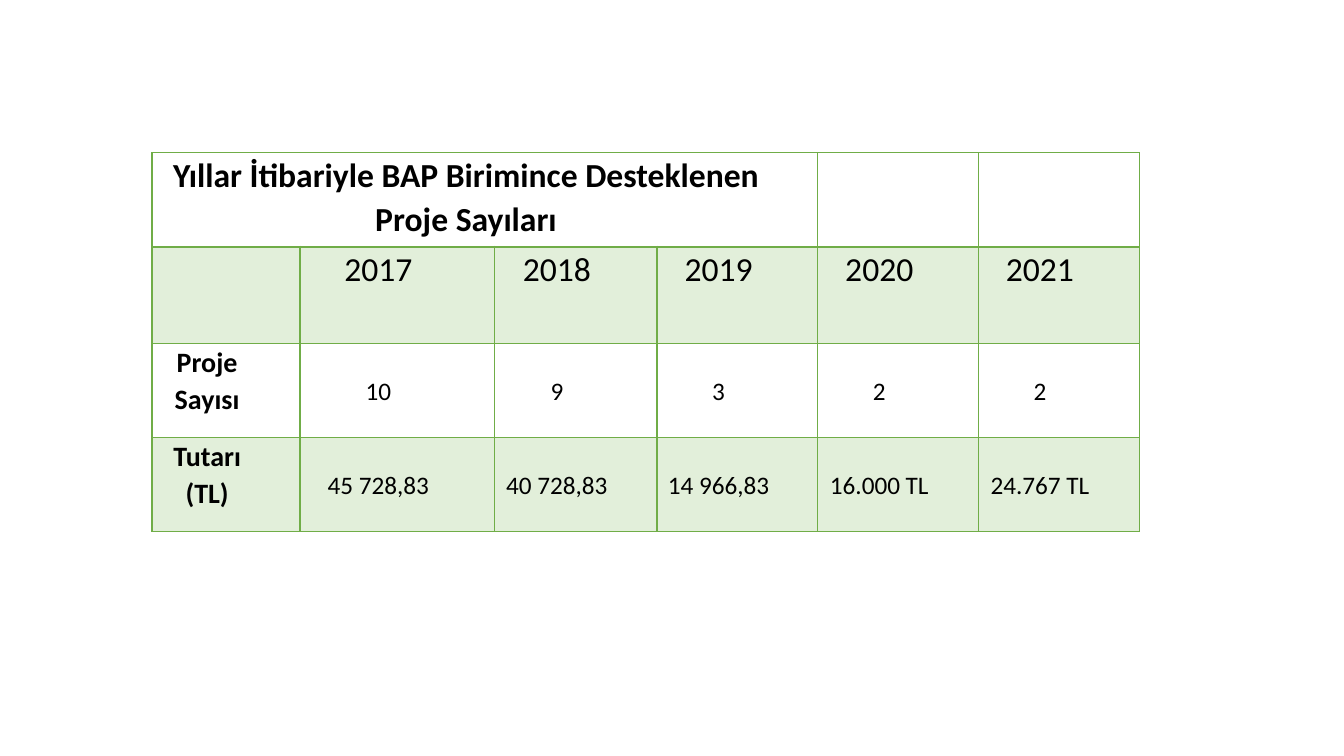
from lxml.etree import SubElement
from pptx import Presentation
from pptx.dml.color import RGBColor
from pptx.enum.text import MSO_ANCHOR as Anchor, PP_ALIGN as Align
from pptx.oxml.ns import qn
from pptx.util import Cm, Pt

GREEN, PALE_GREEN, WHITE, BLACK = "70AD47", "E2EFDA", "FFFFFF", "000000"


def color(value):
    return RGBColor.from_string(value)


def add_borders(cell, bottom_width):
    properties = cell._tc.get_or_add_tcPr()
    widths = {"a:lnL": 1, "a:lnR": 1, "a:lnT": 1, "a:lnB": bottom_width}
    for side, width in widths.items():
        line = SubElement(properties, qn(side), w=str(Pt(width)))
        fill = SubElement(line, qn("a:solidFill"))
        SubElement(fill, qn("a:srgbClr"), val=GREEN)


deck = Presentation()
deck.slide_width, deck.slide_height = Cm(33.87), Cm(19.05)
page = deck.slides.add_slide(deck.slide_layouts[6])

# Table contents and sizes
rows = [
    ["Yıllar İtibariyle BAP Birimince Desteklenen Proje Sayıları", "", "", "", "", ""],
    ["", "2017", "2018", "2019", "2020", "2021"],
    ["Proje Sayısı", "10", "9", "3", "2", "2"],
    ["Tutarı (TL)", "45 728,83", "40 728,83", "14 966,83", "16.000 TL", "24.767 TL"],
]
column_widths = [3.73, 4.9, 4.1, 4.05, 4.05, 4.05]
row_heights = [2.37, 2.43, 2.37, 2.37]

# Table frame
frame = page.shapes.add_table(len(rows), len(column_widths), Cm(3.83), Cm(3.85),
                              Cm(sum(column_widths)), Cm(sum(row_heights)))
table = frame.table
table.first_row = table.horz_banding = False
for column, width in zip(table.columns, column_widths):
    column.width = Cm(width)
for row, height in zip(table.rows, row_heights):
    row.height = Cm(height)
table.cell(0, 0).merge(table.cell(0, 3))

# Cells
for r, texts in enumerate(rows):
    for c, text in enumerate(texts):
        cell = table.cell(r, c)
        add_borders(cell, 2 if r == 0 else 1)
        cell.fill.solid()
        cell.fill.fore_color.rgb = color(PALE_GREEN if r % 2 else WHITE)
        if not text:
            continue
        cell.margin_left = cell.margin_right = Cm(0.12)
        cell.margin_top = cell.margin_bottom = 0
        is_value = r > 1 and c > 0
        cell.vertical_anchor = Anchor.MIDDLE if is_value else Anchor.TOP
        para = cell.text_frame.paragraphs[0]
        para.alignment = Align.CENTER
        para.line_spacing = 1.07
        para._p.get_or_add_pPr().set("marR", str(Cm(0.95)))
        span = para.add_run()
        span.text = text
        span.font.name = "Calibri"
        span.font.size = Pt(24 if r < 2 else 18 if is_value else 20)
        span.font.bold = c == 0
        span.font.color.rgb = color(BLACK)

deck.save("out.pptx")
